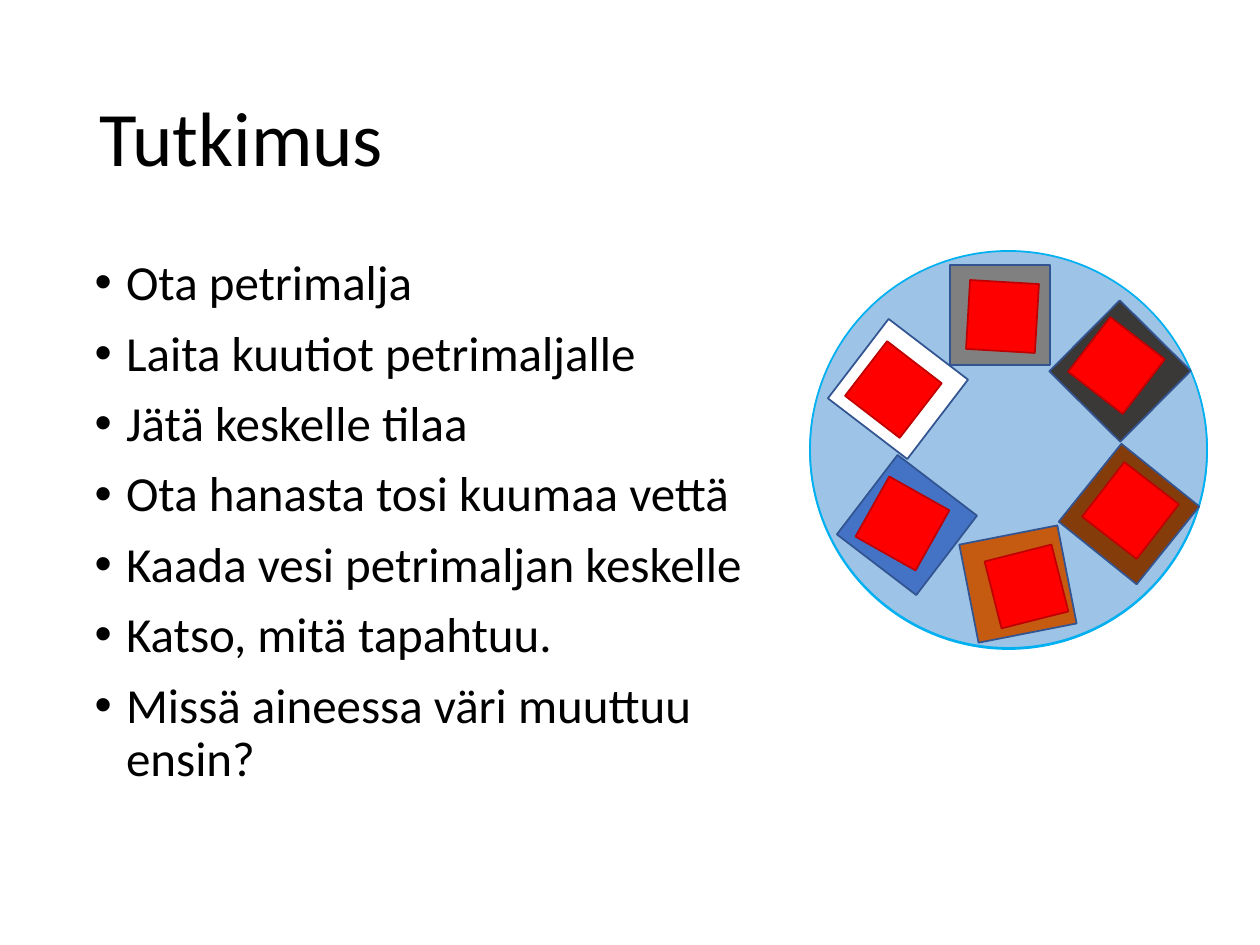
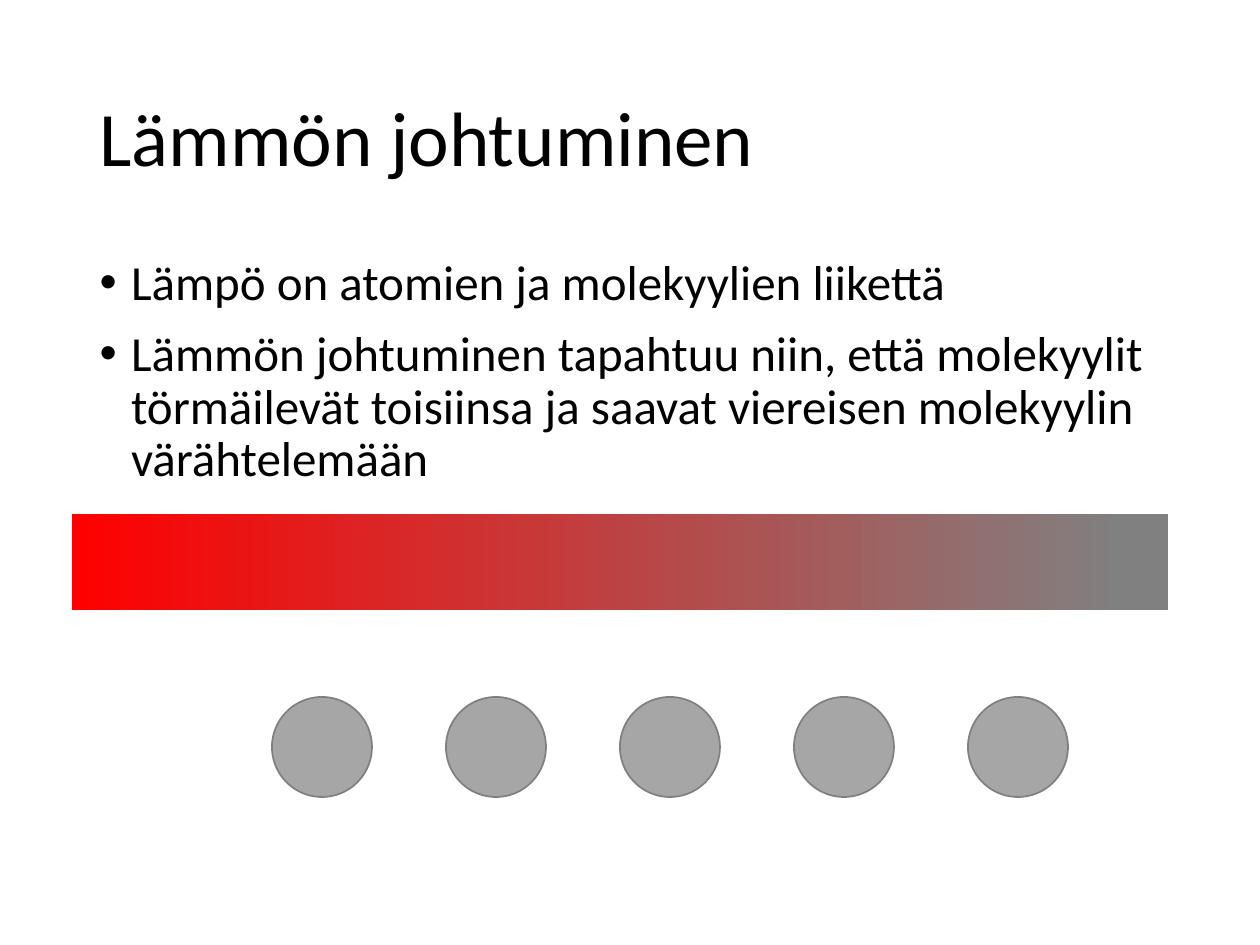
"""Build two Finnish slides about an experiment on the conduction of heat."""
from dataclasses import dataclass

from lxml import etree
from pptx import Presentation
from pptx import util as u
from pptx.dml.color import RGBColor
from pptx.enum import shapes, text
from pptx.oxml import ns


@dataclass(frozen=True)
class Theme:
    font: str = "Calibri"
    title_size: int = 44
    body_size: int = 28
    text: str = "000000"
    plate: str = "9DC3E6"
    plate_shade: str = "DEEBF7"
    plate_line: str = "00B0F0"
    block_line: str = "325491"
    hot: str = "FF0000"
    hot_line: str = "C00000"
    cold: str = "808080"
    atom: str = "A6A6A6"


theme = Theme()
SCALE = u.Inches(1) / 126
RECTANGLE = shapes.MSO_SHAPE.RECTANGLE
OVAL = shapes.MSO_SHAPE.OVAL


def px(*lengths):
    return [u.Emu(round(length * SCALE)) for length in lengths]


def add_shape(parent, kind, box, fill, line=None, rotation=0):
    shape = parent.add_shape(kind, *px(*box))
    shape.shadow.inherit = False
    shape.rotation = rotation
    shape.fill.solid()
    shape.fill.fore_color.rgb = RGBColor.from_string(fill)
    if line:
        shape.line.width = u.Pt(1)
        shape.line.color.rgb = RGBColor.from_string(line)
    else:
        shape.line.fill.background()
    return shape


presentation = Presentation()
presentation.slide_width, presentation.slide_height = px(1260, 945)

contents = [
    ("Tutkimus", (82, 252, 694, 600), [
        "Ota petrimalja",
        "Laita kuutiot petrimaljalle",
        "Jätä keskelle tilaa",
        "Ota hanasta tosi kuumaa vettä",
        "Kaada vesi petrimaljan keskelle",
        "Katso, mitä tapahtuu.",
        "Missä aineessa väri muuttuu ensin?",
    ]),
    ("Lämmön johtuminen", (87, 252, 1086, 248), [
        "Lämpö on atomien ja molekyylien liikettä",
        "Lämmön johtuminen tapahtuu niin, että molekyylit törmäilevät "
        "toisiinsa ja saavat viereisen molekyylin värähtelemään",
    ]),
]

for title, body_box, items in contents:
    slide = presentation.slides.add_slide(presentation.slide_layouts[1])
    placeholders = [
        (slide.shapes.title, (87, 50, 1086, 183), [title], theme.title_size, text.MSO_ANCHOR.MIDDLE),
        (slide.placeholders[1], body_box, items, theme.body_size, text.MSO_ANCHOR.TOP),
    ]
    for placeholder, box, lines, size, anchor in placeholders:
        placeholder.left, placeholder.top, placeholder.width, placeholder.height = px(*box)
        frame = placeholder.text_frame
        frame.text = "\n".join(lines)
        frame_format = {"word_wrap": True, "auto_size": text.MSO_AUTO_SIZE.NONE, "vertical_anchor": anchor}
        for name, value in frame_format.items():
            setattr(frame, name, value)
        for index, paragraph in enumerate(frame.paragraphs):
            if lines is items:
                properties = paragraph._p.get_or_add_pPr()
                properties.set("marL", str(u.Inches(0.25)))
                properties.set("indent", str(-u.Inches(0.25)))
                etree.SubElement(properties, ns.qn("a:buFont"), typeface="Arial")
                etree.SubElement(properties, ns.qn("a:buChar"), char="•")
            paragraph_format = {
                "alignment": text.PP_ALIGN.LEFT,
                "line_spacing": 0.9,
                "space_before": u.Pt(10 if index else 0),
            }
            for name, value in paragraph_format.items():
                setattr(paragraph, name, value)
            font = paragraph.runs[0].font
            for name, value in {"name": theme.font, "size": u.Pt(size)}.items():
                setattr(font, name, value)
            font.color.rgb = RGBColor.from_string(theme.text)

experiment, conduction = presentation.slides

for top, fill in ((252, theme.plate_shade), (251, theme.plate)):
    add_shape(experiment.shapes, OVAL, (810, top, 397, 397), fill, theme.plate_line)

blocks = [
    ("808080", (950, 265), 0, (968, 282), 3.4),
    ("FFFFFF", (848, 339), 307.4, (859, 355), 307.6),
    ("4472C4", (857, 475), 307.4, (868, 489), 299.4),
    ("C55A11", (968, 534), 258.9, (992, 552), 345.8),
    ("843C0B", (1079, 464), 218.8, (1096, 476), 307.7),
    ("3B3838", (1070, 321), 224.8, (1082, 331), 307.7),
]
for fill, block_corner, block_turn, marker_corner, marker_turn in blocks:
    group = experiment.shapes.add_group_shape()
    add_shape(group.shapes, RECTANGLE, (*block_corner, 100, 100), fill, theme.block_line, block_turn)
    add_shape(group.shapes, RECTANGLE, (*marker_corner, 69, 69), theme.hot, theme.hot_line, marker_turn)

rod = add_shape(conduction.shapes, RECTANGLE, (72, 514, 1096, 96), theme.cold)
rod.fill.gradient()
rod.fill.gradient_angle = 0
for stop, position, color in zip(rod.fill.gradient_stops, (0, 0.96), (theme.hot, theme.cold)):
    stop.position = position
    stop.color.rgb = RGBColor.from_string(color)

for column in range(5):
    add_shape(conduction.shapes, OVAL, (272 + 174 * column, 697, 100, 100), theme.atom, theme.cold)

presentation.save("out.pptx")
